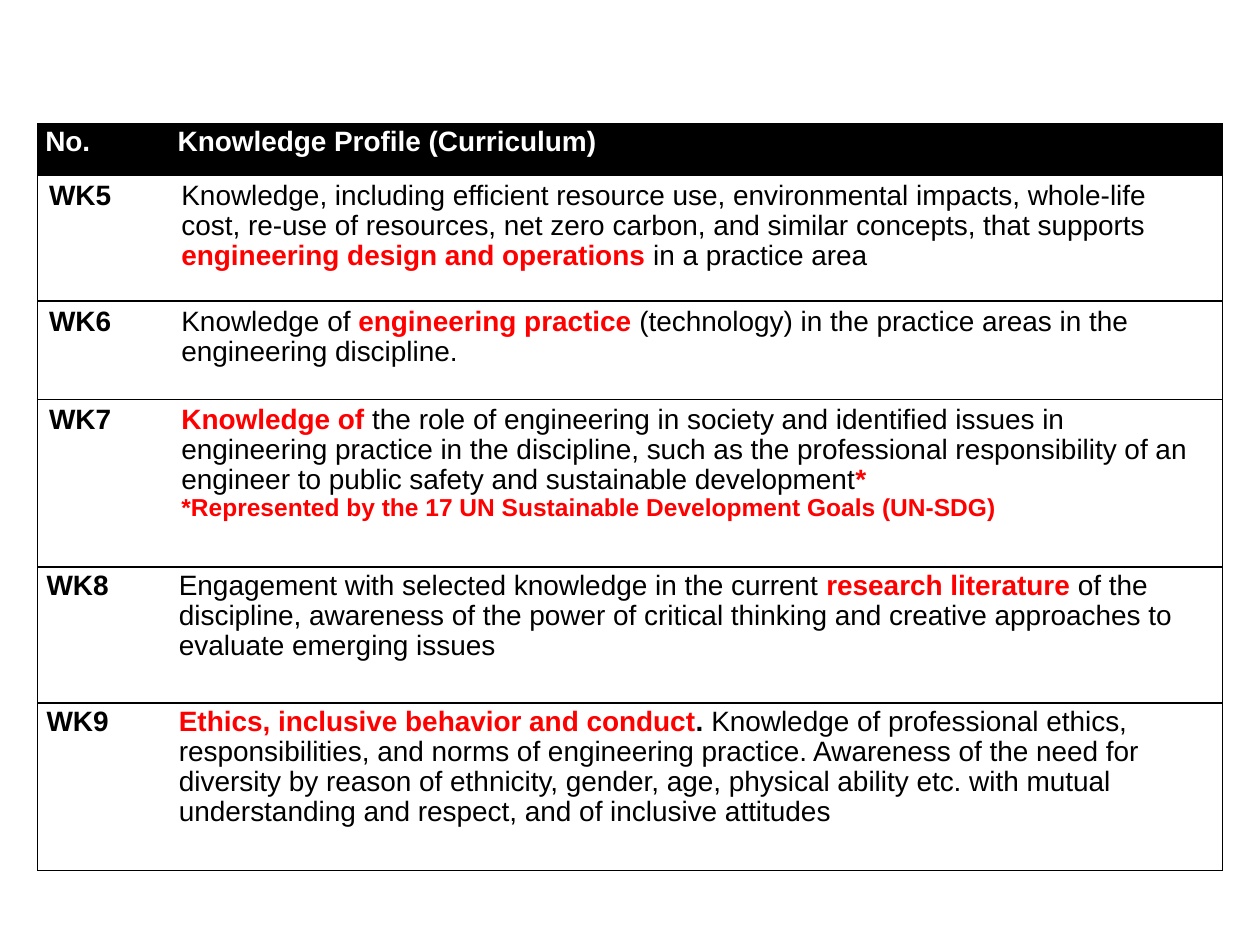
from lxml.etree import SubElement
from pptx import Presentation
from pptx.dml.color import RGBColor as RGB
from pptx.oxml.ns import qn
from pptx.util import Inches, Pt

COLORS = {"ink": "000000", "paper": "FFFFFF", "accent": "FF0000"}
FONT = "Arial"

# Run styles: colour, bold
HEAD, BOLD, PLAIN, KEY = ("paper", True), ("ink", True), ("ink", False), ("accent", True)

# Rows: number, height, horizontal and vertical inset, paragraphs of (text, style, size)
header = ("No.", 0.41, 0.06, 0.03, [[("Knowledge Profile (Curriculum)", HEAD, 16)]])
profiles = [
    ("WK5", 1, 0.09, 0.05, [[
        ("Knowledge, including efficient resource use, environmental impacts, whole-life cost, "
         "re-use of resources, net zero carbon, and similar concepts, that supports ", PLAIN, 16),
        ("engineering design and operations ", KEY, 16),
        ("in a practice area", PLAIN, 16)]]),
    ("WK6", 0.78, 0.09, 0.05, [[
        ("Knowledge of ", PLAIN, 16),
        ("engineering practice ", KEY, 16),
        ("(technology) in the practice areas in the engineering discipline.", PLAIN, 16)]]),
    ("WK7", 1.33, 0.09, 0.05, [[
        ("Knowledge of ", KEY, 16),
        ("the role of engineering in society and identified issues in engineering practice in the "
         "discipline, such as the professional responsibility of an engineer to public safety and "
         "sustainable development", PLAIN, 16),
        ("*", KEY, 16)],
        [("*Represented by the 17 UN Sustainable Development Goals (UN-SDG)", KEY, 14)]]),
    ("WK8", 1.08, 0.07, 0.04, [[
        ("Engagement with selected knowledge in the current ", PLAIN, 16),
        ("research literature ", KEY, 16),
        ("of the discipline, awareness of the power of critical thinking and creative approaches "
         "to evaluate emerging issues", PLAIN, 16)]]),
    ("WK9", 1.33, 0.07, 0.04, [[
        ("Ethics, inclusive behavior and conduct", KEY, 16),
        (". ", BOLD, 16),
        ("Knowledge of professional ethics, responsibilities, and norms of engineering practice. "
         "Awareness of the need for diversity by reason of ethnicity, gender, age, physical ability "
         "etc. with mutual understanding and respect, and of inclusive attitudes", PLAIN, 16)]]),
]
rows = [header] + profiles
column_widths = [1.05, 8.35]


def set_borders(cell, widths):
    """Draw the given sides in points; a width of 0 hides the side."""
    props = cell._tc.get_or_add_tcPr()
    for place, side in enumerate(("L", "R", "T", "B")):
        line = props.makeelement(qn(f"a:ln{side}"), {"w": str(int(Pt(widths[side])))})
        props.insert(place, line)
        if widths[side]:
            fill = SubElement(line, qn("a:solidFill"))
            SubElement(fill, qn("a:srgbClr"), val=COLORS["ink"])
        else:
            SubElement(line, qn("a:noFill"))


def write(cell, paragraphs):
    """Fill the cell with styled runs."""
    frame = cell.text_frame
    for index, runs in enumerate(paragraphs):
        paragraph = frame.add_paragraph() if index else frame.paragraphs[0]
        paragraph.line_spacing = 0.96
        for text, (color, bold), size in runs:
            run = paragraph.add_run()
            run.text = text
            run.font.name, run.font.size, run.font.bold = FONT, Pt(size), bold
            run.font.color.rgb = RGB.from_string(COLORS[color])


# Blank slide
prs = Presentation()
prs.slide_width, prs.slide_height = Inches(10), Inches(7.5)
slide = prs.slides.add_slide(prs.slide_layouts[6])

# Knowledge profile table
total_height = sum(row[1] for row in rows)
profile_table = slide.shapes.add_table(
    len(rows), len(column_widths), Inches(0.3), Inches(0.98),
    Inches(sum(column_widths)), Inches(total_height)).table
profile_table.horz_banding = False
for column, width in zip(profile_table.columns, column_widths):
    column.width = Inches(width)

for r, (number, height, inset_x, inset_y, description) in enumerate(rows):
    profile_table.rows[r].height = Inches(height)
    is_header = r == 0
    number_style = HEAD if is_header else BOLD
    for c, content in enumerate(([[(number, number_style, 16)]], description)):
        cell = profile_table.cell(r, c)
        cell.margin_left = cell.margin_right = Inches(inset_x)
        cell.margin_top = cell.margin_bottom = Inches(inset_y)
        cell.fill.solid()
        cell.fill.fore_color.rgb = RGB.from_string(COLORS["ink" if is_header else "paper"])
        write(cell, content)
        # Outer frame and row rules only, no line between the columns
        set_borders(cell, {"L": 0 if c else 0.5, "R": 0.5 if c else 0,
                           "T": 0.5 if r < 2 else 1, "B": 0.5 if is_header else 1})

prs.save("out.pptx")
